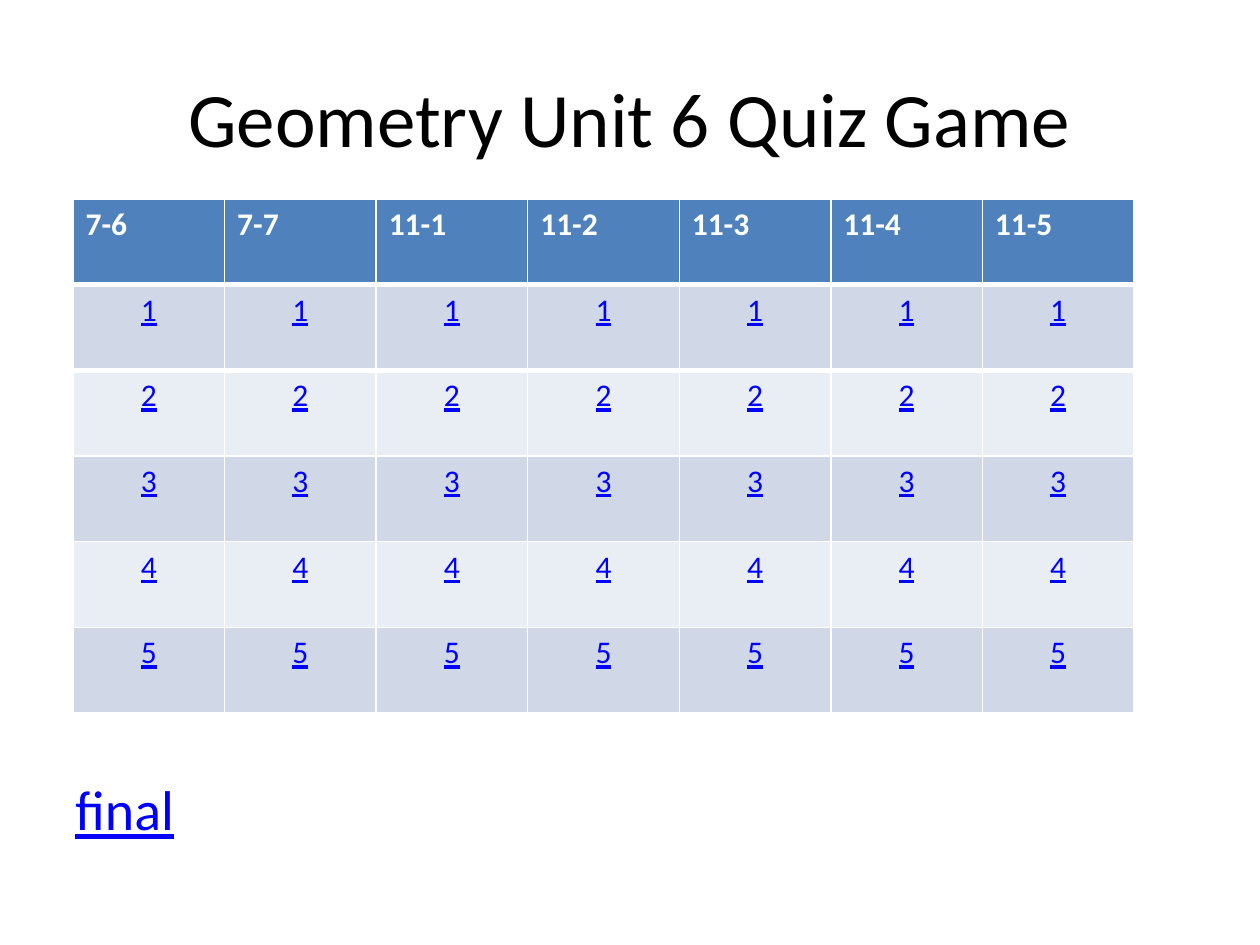
from lxml.etree import SubElement
from pptx import Presentation
from pptx.dml.color import RGBColor
from pptx.enum.text import MSO_ANCHOR, PP_ALIGN
from pptx.oxml.ns import qn
from pptx.util import Inches, Pt

FONT = "Calibri"
BLACK, WHITE, LINK_BLUE = "000000", "FFFFFF", "0000FF"
HEADER_FILL = "4F81BD"
BAND_FILLS = ("D0D8E8", "E9EDF4")
CATEGORIES = ["7-6", "7-7", "11-1", "11-2", "11-3", "11-4", "11-5"]
QUESTIONS = ["1", "2", "3", "4", "5"]


def rgb(color):
    return RGBColor.from_string(color)


def add_run(p, text, size, color, bold=False, underline=False):
    r = p.add_run()
    r.text = text
    r.font.name = FONT
    r.font.size = Pt(size)
    r.font.bold = bold
    r.font.underline = underline
    r.font.color.rgb = rgb(color)


def set_title(s, text):
    title = s.shapes.title
    title.left, title.top = Inches(0.5), Inches(0.3)
    title.width, title.height = Inches(9), Inches(1.25)
    tf = title.text_frame
    tf.vertical_anchor = MSO_ANCHOR.MIDDLE
    p = tf.paragraphs[0]
    p.alignment = PP_ALIGN.CENTER
    add_run(p, text, 44, BLACK)


def fill_cell(cell, fill):
    cell.fill.solid()
    cell.fill.fore_color.rgb = rgb(fill)


def set_border(cell, side, color, width):
    """Draw one cell edge; side is lnL, lnR, lnT or lnB."""
    tc_pr = cell._tc.get_or_add_tcPr()
    ln = SubElement(tc_pr, qn(f"a:{side}"), w=str(Pt(width)))
    SubElement(SubElement(ln, qn("a:solidFill")), qn("a:srgbClr"), val=color)
    tc_pr.insert(0, ln)


def add_board(s):
    """Add the game board; its thin white borders come from the default table style."""
    table = s.shapes.add_table(len(QUESTIONS) + 1, len(CATEGORIES), Inches(0.58),
                               Inches(1.58), Inches(8.42), Inches(4.08)).table
    for col, category in enumerate(CATEGORIES):
        header = table.cell(0, col)
        fill_cell(header, HEADER_FILL)
        add_run(header.text_frame.paragraphs[0], category, 18, WHITE, bold=True)
        for row, question in enumerate(QUESTIONS):
            cell = table.cell(row + 1, col)
            fill_cell(cell, BAND_FILLS[row % 2])
            p = cell.text_frame.paragraphs[0]
            p.alignment = PP_ALIGN.CENTER
            add_run(p, question, 18, LINK_BLUE, underline=True)
        set_border(header, "lnB", WHITE, 3)
        set_border(table.cell(1, col), "lnT", WHITE, 3)


def add_final(s, text):
    tb = s.shapes.add_textbox(Inches(0.5), Inches(6.1), Inches(9), Inches(0.64))
    tf = tb.text_frame
    tf.word_wrap = True
    add_run(tf.paragraphs[0], text, 32, LINK_BLUE, underline=True)


def main():
    prs = Presentation()
    prs.slide_width, prs.slide_height = Inches(10), Inches(7.5)
    s = prs.slides.add_slide(prs.slide_layouts[5])
    set_title(s, "Geometry Unit 6 Quiz Game")
    add_final(s, "final")
    add_board(s)
    prs.save("out.pptx")


if __name__ == "__main__":
    main()
